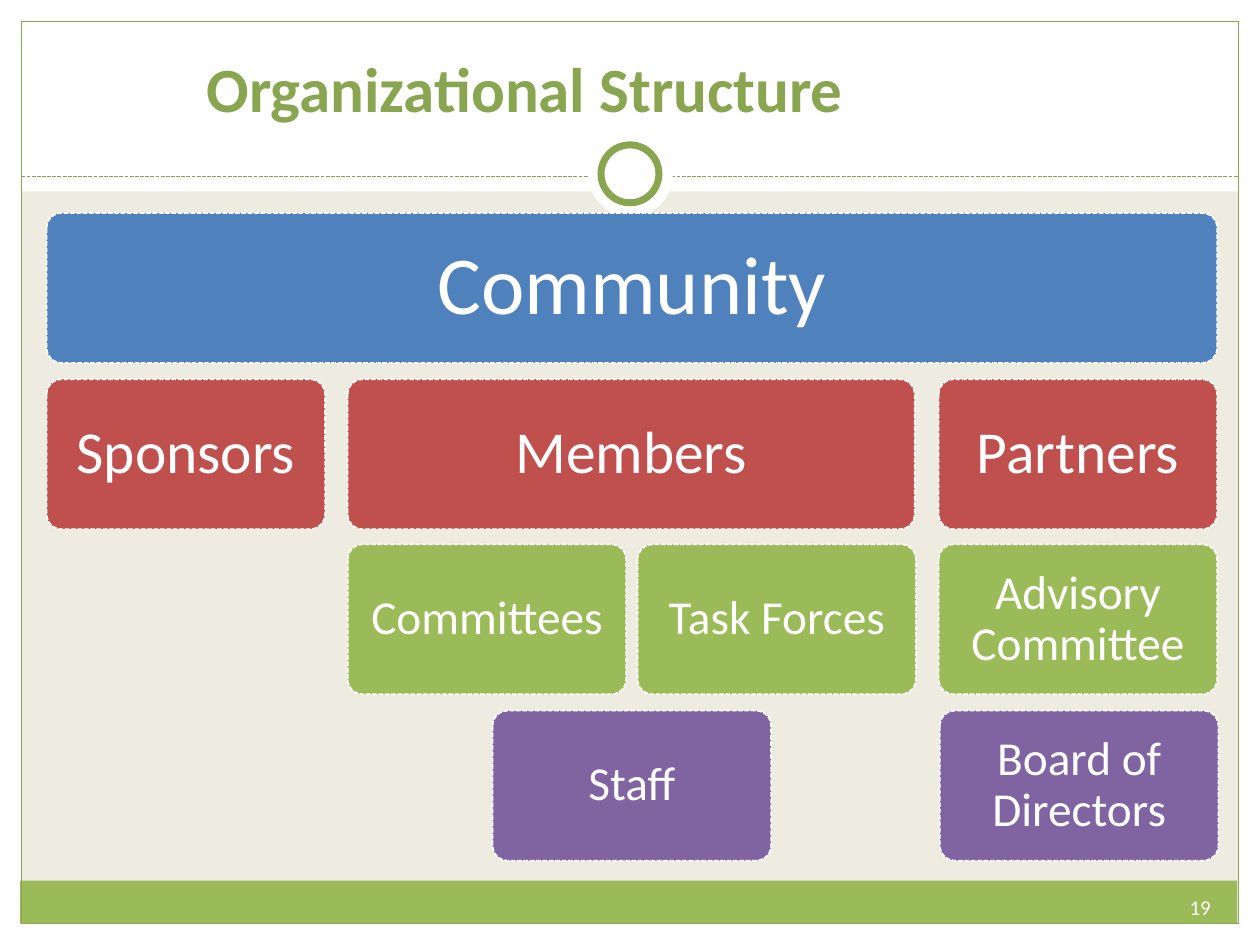
from pptx import Presentation
from pptx.dml.color import RGBColor
from pptx.enum.dml import MSO_LINE
from pptx.enum.shapes import MSO_CONNECTOR, MSO_SHAPE
from pptx.enum.text import MSO_ANCHOR, MSO_AUTO_SIZE, PP_ALIGN
from pptx.oxml.ns import qn
from pptx.util import Pt
from lxml import etree

RECT, OVAL, ROUNDED = MSO_SHAPE.RECTANGLE, MSO_SHAPE.OVAL, MSO_SHAPE.ROUNDED_RECTANGLE
DASH = MSO_LINE.SQUARE_DOT
LEFT_RIGHT_CENTER, RIGHT = PP_ALIGN.CENTER, PP_ALIGN.RIGHT
MIDDLE, BOTTOM = MSO_ANCHOR.MIDDLE, MSO_ANCHOR.BOTTOM
PX = 9144
COLORS = {
    "paper": "EEECE1", "white": "FFFFFF", "olive": "89A54F",
    "blue": "4F81BD", "red": "C0504D", "green": "9BBB59", "purple": "8064A2",
}


def add_block(kind, box, fill=None, line=None, weight=0.75):
    block = slide.shapes.add_shape(kind, *(n * PX for n in box))
    block.shadow.inherit = False
    if fill:
        block.fill.solid()
        block.fill.fore_color.rgb = RGBColor.from_string(COLORS[fill])
    else:
        block.fill.background()
    if line:
        block.line.color.rgb = RGBColor.from_string(COLORS[line])
        block.line.width = Pt(weight)
    else:
        block.line.fill.background()
    return block


def write(holder, text, size, color, align, anchor, inset_x, inset_y, bold=False):
    frame = holder.text_frame
    frame.text = text
    frame.word_wrap = True
    frame.auto_size = MSO_AUTO_SIZE.NONE
    frame.vertical_anchor = anchor
    frame.margin_left = frame.margin_right = inset_x * PX
    frame.margin_top = frame.margin_bottom = inset_y * PX
    paragraph = frame.paragraphs[0]
    paragraph.alignment = align
    font = paragraph.runs[0].font
    font.name, font.size, font.bold = "Calibri", Pt(size), bold
    font.color.rgb = RGBColor.from_string(COLORS[color])
    return paragraph


prs = Presentation()
prs.slide_width, prs.slide_height = 1000 * PX, 750 * PX
slide = prs.slides.add_slide(prs.slide_layouts[5])
slide.background.fill.solid()
slide.background.fill.fore_color.rgb = RGBColor.from_string(COLORS["paper"])

for margin in [(0, 733, 1000, 17), (0, 0, 1000, 152), (0, 0, 17, 750), (983, 0, 17, 750)]:
    add_block(RECT, margin, "white")
add_block(RECT, (16, 699, 966, 34), "green")
add_block(RECT, (17, 17, 966, 716), line="olive")

divider = slide.shapes.add_connector(
    MSO_CONNECTOR.STRAIGHT, 17 * PX, 140 * PX, 983 * PX, 140 * PX)
divider.line.color.rgb = RGBColor.from_string(COLORS["olive"])
divider.line.width = Pt(0.75)
divider.line.dash_style = DASH
etree.SubElement(divider.element.spPr, qn("a:effectLst"))

add_block(OVAL, (467, 105, 67, 67), "white")
add_block(OVAL, (477, 115, 46, 46), "white", "olive", 4)

page_number = slide.shapes.add_textbox(633 * PX, 700 * PX, 333 * PX, 40 * PX)
write(page_number, "19", 12, "white", RIGHT, MIDDLE, 5, 5)

title = slide.shapes.title
title.left, title.top, title.width, title.height = (n * PX for n in (14, 18, 805, 85))
write(title, "Organizational Structure", 36, "olive", LEFT_RIGHT_CENTER, BOTTOM, 7, 4, True)
slide.shapes.element.append(title.element)

FIRST_ROW, ROW_PITCH, ROW_HEIGHT, UNIT = 169, 131.6, 119, 221
levels = [
    ("blue", 47, 20, [("Community", 37, 929)]),
    ("red", 34, 14, [("Sponsors", 37, UNIT), ("Members", 276, 450), ("Partners", 745, UNIT)]),
    ("green", 27, 11, [("Committees", 276, UNIT), ("Task Forces", 506, UNIT),
                       ("Advisory Committee", 745, UNIT)]),
    ("purple", 27, 11, [("Staff", 391, UNIT), ("Board of Directors", 746, UNIT)]),
]
for row, (color, size, inset, groups) in enumerate(levels):
    top = round(FIRST_ROW + row * ROW_PITCH)
    for name, left, width in groups:
        group = add_block(ROUNDED, (left, top, width, ROW_HEIGHT), color, "white", 0.9)
        group.adjustments[0] = 0.1
        group.line.dash_style = DASH
        label = write(group, name, size, "white", LEFT_RIGHT_CENTER, MIDDLE, inset, inset)
        label.line_spacing = 0.9

prs.save("out.pptx")
